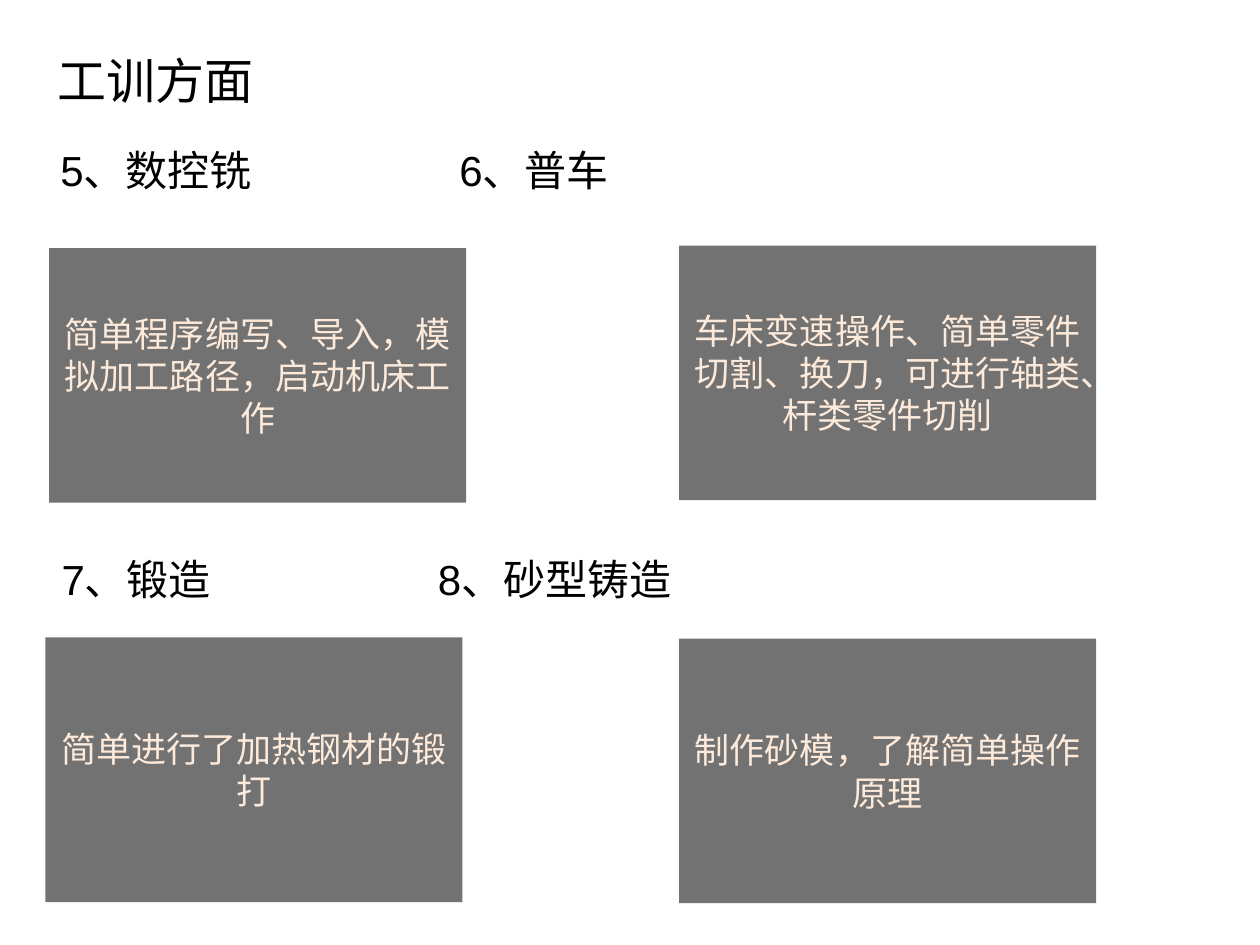
"""Build the workshop training slide with two headings and four description cards."""
from lxml import etree
from pptx import Presentation
from pptx.dml.color import RGBColor
from pptx.enum.shapes import MSO_SHAPE
from pptx.enum.text import MSO_ANCHOR, PP_ALIGN
from pptx.oxml.ns import qn
from pptx.util import Pt

RECTANGLE = MSO_SHAPE.RECTANGLE
MIDDLE = MSO_ANCHOR.MIDDLE
TOP = MSO_ANCHOR.TOP
CENTER = PP_ALIGN.CENTER
CHINESE_FONT = "Noto Sans CJK SC"
COLORS = {"card": "333333", "card_text": "FDEADA", "heading": "000000"}
CARD_WIDTH = 238.3
CARD_OPACITY = 69


def add_run(paragraph, text, size, font_name, color):
    run = paragraph.add_run()
    run.text = text
    run.font.size = Pt(size)
    run.font.name = font_name
    run.font.color.rgb = RGBColor.from_string(COLORS[color])
    east_asian = etree.SubElement(run.font._element, qn("a:ea"))
    east_asian.set("typeface", CHINESE_FONT)


def add_text_box(left, top, width, height, anchor, wrap):
    text_box = slide.shapes.add_textbox(Pt(left), Pt(top), Pt(width), Pt(height))
    text_box.text_frame.word_wrap = wrap
    text_box.text_frame.vertical_anchor = anchor
    return text_box.text_frame.paragraphs[0]


presentation = Presentation()
presentation.slide_width = Pt(720)
presentation.slide_height = Pt(540)
slide = presentation.slides.add_slide(presentation.slide_layouts[6])

title = add_text_box(25.9, 25.2, 127.4, 41, TOP, False)
add_run(title, "工训方面", 28, CHINESE_FONT, "heading")

headings = [
    (27.4, 79.2, 594, 36, TOP, 228, "5、数控铣", "6、普车"),
    (28.1, 297.4, 615.6, 66.2, MIDDLE, 215, "7、锻造", "8、砂型铸造"),
]
for left, top, width, height, anchor, tab_position, first, second in headings:
    paragraph = add_text_box(left, top, width, height, anchor, True)
    tab_list = etree.SubElement(paragraph._p.get_or_add_pPr(), qn("a:tabLst"))
    etree.SubElement(tab_list, qn("a:tab"), pos=str(Pt(tab_position)), algn="l")
    add_run(paragraph, f"{first}\t{second}", 24, "Arial", "heading")

cards = [
    (28.1, 141.8, 145.4, "简单程序编写、导入，模拟加工路径，启动机床工作"),
    (388.1, 140.4, 145.4, "车床变速操作、简单零件切割、换刀，可进行轴类、杆类零件切削"),
    (25.9, 364.3, 151.2, "简单进行了加热钢材的锻打"),
    (388.1, 365, 151.2, "制作砂模，了解简单操作原理"),
]
for left, top, height, text in cards:
    card = slide.shapes.add_shape(RECTANGLE, Pt(left), Pt(top), Pt(CARD_WIDTH), Pt(height))
    card.shadow.inherit = False
    card.line.fill.background()
    card.fill.solid()
    card.fill.fore_color.rgb = RGBColor.from_string(COLORS["card"])
    fill_color = card._element.spPr.find(f"{qn('a:solidFill')}/{qn('a:srgbClr')}")
    etree.SubElement(fill_color, qn("a:alpha"), val=str(CARD_OPACITY * 1000))
    card.text_frame.word_wrap = True
    card.text_frame.vertical_anchor = MIDDLE
    paragraph = card.text_frame.paragraphs[0]
    paragraph.alignment = CENTER
    add_run(paragraph, text, 20, "Calibri", "card_text")

presentation.save("out.pptx")
